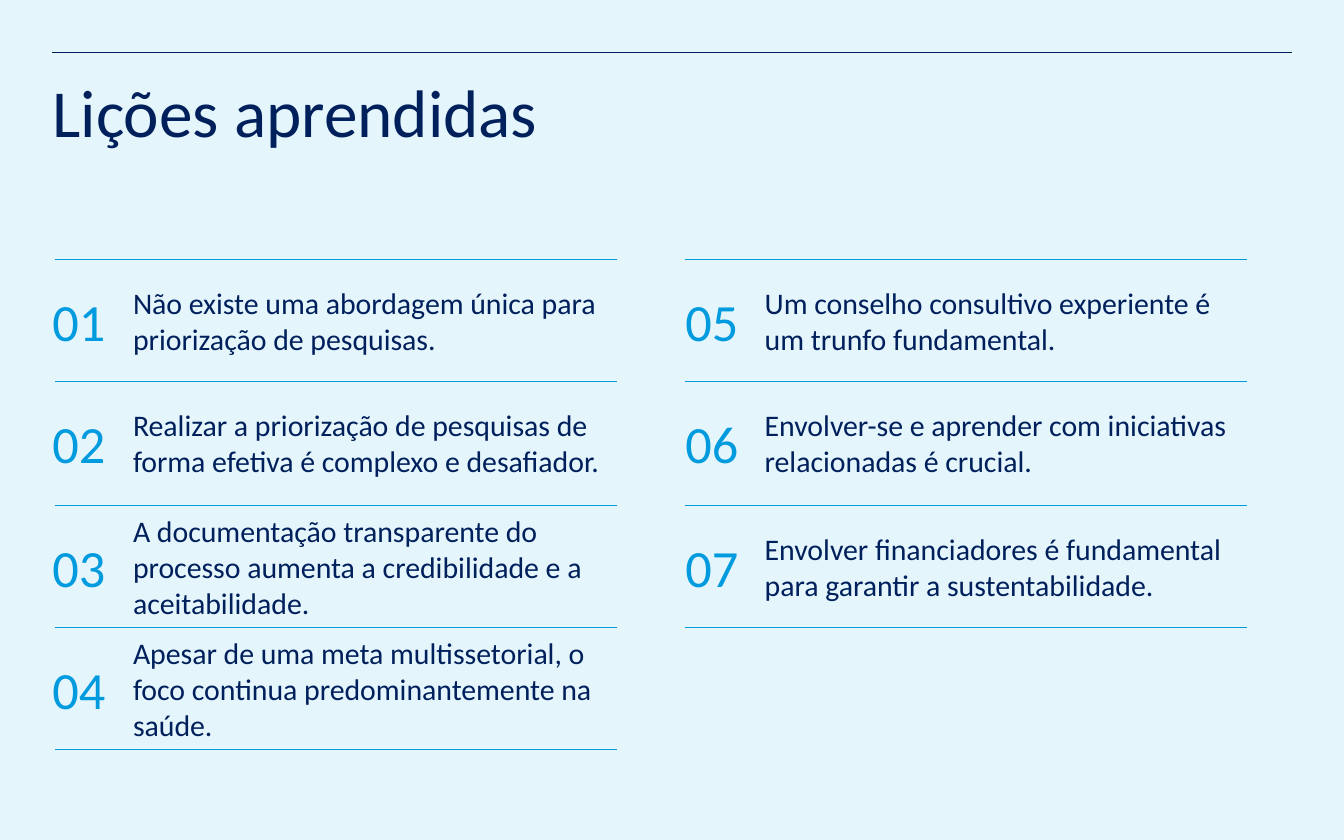
from dataclasses import dataclass

from lxml import etree
from pptx import Presentation
from pptx import util as u
from pptx.dml.color import RGBColor
from pptx.enum import shapes, text
from pptx.oxml.ns import qn

PX = 9144


@dataclass(frozen=True)
class Theme:
    """Colours, font and type sizes of the slide."""
    back: str = "E5F5FC"
    navy: str = "00205C"
    sky: str = "009ADE"
    font: str = "Calibri"
    head: int = 36
    num: int = 28
    body: int = 16
    rule: float = 0.5


def write(frame, words, size, color, font, anchor=text.MSO_ANCHOR.MIDDLE, top=0, pitch=None):
    """Fill a text frame with one formatted paragraph."""
    frame.word_wrap = True
    frame.auto_size = text.MSO_AUTO_SIZE.NONE
    frame.vertical_anchor = anchor
    frame.margin_left = frame.margin_right = frame.margin_bottom = 0
    frame.margin_top = top * PX
    para = frame.paragraphs[0]
    para.alignment = text.PP_ALIGN.LEFT
    if pitch:
        para.line_spacing = pitch
    run = para.add_run()
    run.text = words
    run.font.size = u.Pt(size)
    run.font.name = font
    run.font.color.rgb = RGBColor.from_string(color)


class Deck:
    """Holds the theme and the current slide."""

    def __init__(self, wide, high, theme):
        """Open a title-only slide with a plain background."""
        self.theme = theme
        self.file = Presentation()
        self.file.slide_width, self.file.slide_height = wide * PX, high * PX
        self.slide = self.file.slides.add_slide(self.file.slide_layouts[5])
        fill = self.slide.background.fill
        fill.solid()
        fill.fore_color.rgb = RGBColor.from_string(theme.back)

    def title(self, words, x, y, w, h):
        """Place and fill the title placeholder."""
        head = self.slide.shapes.title
        head.left, head.top, head.width, head.height = (n * PX for n in (x, y, w, h))
        write(head.text_frame, words, self.theme.head, self.theme.navy, self.theme.font,
              anchor=text.MSO_ANCHOR.TOP, top=20, pitch=0.9)

    def label(self, words, x, y, w, h, size, color):
        """Add a text box centred on its height."""
        box = self.slide.shapes.add_textbox(*(n * PX for n in (x, y, w, h)))
        write(box.text_frame, words, size, color, self.theme.font)

    def rule(self, x, y, w, color):
        """Add a thin horizontal line."""
        line = self.slide.shapes.add_connector(
            shapes.MSO_CONNECTOR.STRAIGHT, x * PX, y * PX, (x + w) * PX, y * PX)
        line.line.color.rgb = RGBColor.from_string(color)
        line.line.width = u.Pt(self.theme.rule)
        etree.SubElement(line._element.spPr, qn("a:effectLst"))

    def lesson(self, num, words, x, gap, y, h):
        """Add a number and the lesson beside it."""
        look = self.theme
        self.label(f"{num:02d}", x, y, 57, h, look.num, look.sky)
        self.label(words, x + gap, y, 363, h, look.body, look.navy)


LEFT = [
    "Não existe uma abordagem única para priorização de pesquisas.",
    "Realizar a priorização de pesquisas de forma efetiva é complexo e desafiador.",
    "A documentação transparente do processo aumenta a credibilidade e a aceitabilidade.",
    "Apesar de uma meta multissetorial, o foco continua predominantemente na saúde.",
]
RIGHT = [
    "Um conselho consultivo experiente é um trunfo fundamental.",
    "Envolver-se e aprender com iniciativas relacionadas é crucial.",
    "Envolver financiadores é fundamental para garantir a sustentabilidade.",
]
TOP, STEP = 193, 91.25


def level(row):
    """Return the top of a row in px."""
    return round(TOP + row * STEP)


def main():
    """Build and save the slide."""
    look = Theme()
    deck = Deck(1000, 625, look)
    deck.rule(39, 39, 922, look.navy)
    deck.title("Lições aprendidas", 39, 39, 589, 81)
    num = 1
    for items, x, gap, edge in ((LEFT, 39, 60, 41), (RIGHT, 510, 59, 510)):
        for row, words in enumerate(items):
            deck.lesson(num, words, x, gap, level(row), 91)
            num += 1
        for row in range(len(items) + 1):
            deck.rule(edge, level(row), 418, look.sky)
    deck.file.save("out.pptx")


if __name__ == "__main__":
    main()
